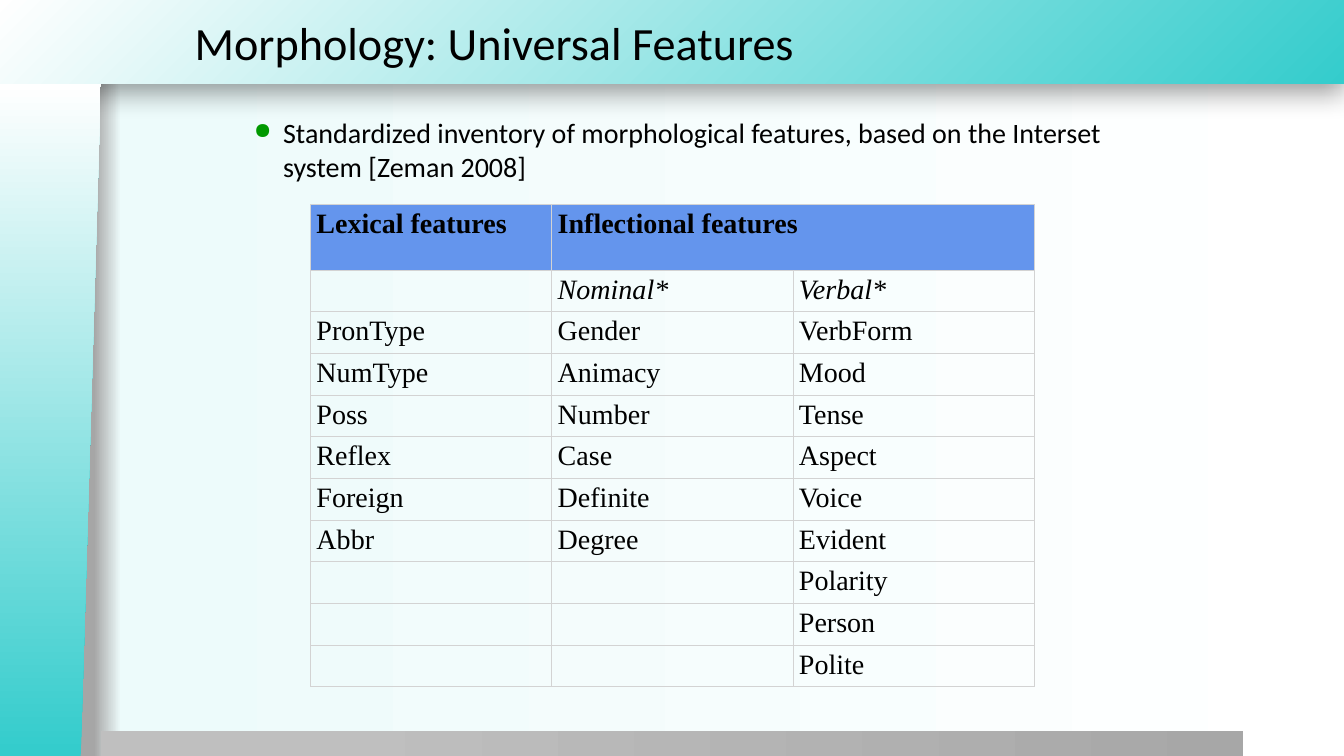
"""Builds a slide listing the universal morphological features."""
import pptx
import pptx.dml.color
import pptx.enum.shapes
import pptx.enum.text
import pptx.oxml
import pptx.oxml.ns
import pptx.util

RGB = pptx.dml.color.RGBColor
SHAPE = pptx.enum.shapes.MSO_SHAPE
ANCHOR = pptx.enum.text.MSO_ANCHOR
Pt = pptx.util.Pt
qn = pptx.oxml.ns.qn

BLACK = RGB(0x00, 0x00, 0x00)
WHITE = RGB(0xFF, 0xFF, 0xFF)
TEAL = RGB(0x34, 0xCC, 0xCC)
MIST = RGB(0xED, 0xFB, 0xFB)
EDGE_GRAY = RGB(0xA6, 0xA6, 0xA6)
FOOT_LIGHT = RGB(0xBF, 0xBF, 0xBF)
FOOT_DARK = RGB(0xA7, 0xA7, 0xA7)
GREEN = RGB(0x00, 0x99, 0x00)
HEADER_BLUE = RGB(0x64, 0x95, 0xED)
BORDER_GRAY = RGB(0xD3, 0xD3, 0xD3)

WIDTH, HEIGHT = pptx.util.Inches(13.33), pptx.util.Inches(7.5)
COLUMN, ROW = WIDTH / 100, HEIGHT / 75

SANS, SERIF = "Calibri", "Times New Roman"
LINEAR = '<a:lin ang="0" scaled="0"/>'
FROM_CORNER = '<a:path path="circle"><a:fillToRect l="100000" t="100000"/></a:path>'

FEATURES = [
    ("Lexical features", "Inflectional features", ""),
    ("", "Nominal*", "Verbal*"),
    ("PronType", "Gender", "VerbForm"),
    ("NumType", "Animacy", "Mood"),
    ("Poss", "Number", "Tense"),
    ("Reflex", "Case", "Aspect"),
    ("Foreign", "Definite", "Voice"),
    ("Abbr", "Degree", "Evident"),
    ("", "", "Polarity"),
    ("", "", "Person"),
    ("", "", "Polite"),
]


def grid_box(left, top, width, height):
    """Turn columns and rows of the slide grid into lengths."""
    return int(left * COLUMN), int(top * ROW), int(width * COLUMN), int(height * ROW)


def xml(text):
    """Parse one drawing element."""
    head, sep, tail = text.partition(">")
    slash = "/" if head.endswith("/") else ""
    return pptx.oxml.parse_xml(f"{head.rstrip('/')} {pptx.oxml.ns.nsdecls('a')}{slash}{sep}{tail}")


def set_gradient(fill, element, stops, direction=LINEAR):
    """Give a fill the colour stops and the direction of a gradient."""
    fill.gradient()
    grad = next(element.iter(qn("a:gradFill")))
    marks = "".join(
        f'<a:gs pos="{share * 1000}"><a:srgbClr val="{color}"/></a:gs>' for share, color in stops
    )
    grad.getparent().replace(
        grad, xml(f'<a:gradFill rotWithShape="1"><a:gsLst>{marks}</a:gsLst>{direction}</a:gradFill>')
    )


def add_panel(s, kind, box, stops, direction=LINEAR):
    """Add a frame panel with a gradient and no outline."""
    sp = s.shapes.add_shape(kind, *grid_box(*box))
    sp.shadow.inherit = False
    sp.line.fill.background()
    set_gradient(sp.fill, sp.element, stops, direction)
    return sp


def add_frame(s):
    """Add the background, the foot bar, the side panel and the top band."""
    set_gradient(s.background.fill, s.element, [(7, EDGE_GRAY), (9, MIST), (100, WHITE)])
    band = add_panel(s, SHAPE.RECTANGLE, (0, 0, 100, 8.3), [(0, TEAL), (100, WHITE)], FROM_CORNER)
    effects = band.element.spPr.find(qn("a:effectLst"))
    effects.append(xml(
        f'<a:outerShdw blurRad="{Pt(20)}" dist="{Pt(6)}" dir="5400000" rotWithShape="0">'
        f'<a:srgbClr val="{BLACK}"><a:alpha val="40000"/></a:srgbClr></a:outerShdw>'
    ))
    add_panel(s, SHAPE.RECTANGLE, (7.5, 72.5, 85, 2.5), [(20, FOOT_LIGHT), (100, FOOT_DARK)])
    side = add_panel(
        s, SHAPE.FLOWCHART_MANUAL_INPUT, (-21.3, 36.7, 50.1, 10), [(1, TEAL), (100, WHITE)]
    )
    side.rotation = 270
    side.element.spPr.find(qn("a:xfrm")).set("flipV", "1")


def add_run(p, text, size, font):
    """Add a black run to a paragraph."""
    r = p.add_run()
    r.text = text
    r.font.size = Pt(size)
    r.font.name = font
    r.font.color.rgb = BLACK
    return r


def set_title(s, text):
    """Place the title over the top band."""
    title = s.shapes.title
    title.left, title.top, title.width, title.height = grid_box(13.73, 0, 86.27, 8.3)
    title.element.getparent().append(title.element)
    tf = title.text_frame
    tf.auto_size = pptx.enum.text.MSO_AUTO_SIZE.NONE
    tf.vertical_anchor = ANCHOR.MIDDLE
    p = tf.paragraphs[0]
    p.alignment = pptx.enum.text.PP_ALIGN.LEFT
    add_run(p, text, 33, SANS)


def add_bullet(s, text):
    """Add the bulleted statement above the table."""
    tf = s.shapes.add_textbox(*grid_box(18.15, 11, 70.3, 8.3)).text_frame
    tf.word_wrap = True
    p = tf.paragraphs[0]
    p.space_before = Pt(4)
    add_run(p, text, 20, SANS)
    pPr = p._p.get_or_add_pPr()
    indent = pptx.util.Inches(0.29)
    pPr.set("marL", str(indent))
    pPr.set("indent", str(-indent))
    pPr.append(xml(f'<a:buClr><a:srgbClr val="{GREEN}"/></a:buClr>'))
    pPr.append(xml('<a:buSzPct val="80000"/>'))
    pPr.append(xml('<a:buChar char="●"/>'))


def format_cell(cell, header):
    """Set the borders, margins and fill of a cell."""
    tcPr = cell._tc.get_or_add_tcPr()
    for side in "LRTB":
        tcPr.append(xml(
            f'<a:ln{side} w="{Pt(0.6)}"><a:solidFill><a:srgbClr val="{BORDER_GRAY}"/>'
            f'</a:solidFill></a:ln{side}>'
        ))
    cell.margin_left = cell.margin_right = pptx.util.Inches(0.06)
    cell.margin_top = cell.margin_bottom = pptx.util.Inches(0.04)
    if header:
        cell.fill.solid()
        cell.fill.fore_color.rgb = HEADER_BLUE
    else:
        cell.fill.background()


def add_feature_table(s, features):
    """Add the table of lexical and inflectional features."""
    box = grid_box(23.1, 20.3, 53.85, 47.5)
    table = s.shapes.add_table(len(features), 3, *box).table
    for i, texts in enumerate(features):
        table.rows[i].height = int((4.1 if i else 6.5) * ROW)
        for j, text in enumerate(texts):
            cell = table.cell(i, j)
            format_cell(cell, header=i == 0)
            if text:
                r = add_run(cell.text_frame.paragraphs[0], text, 20, SERIF)
                r.font.bold = i == 0
                r.font.italic = i == 1
    table.cell(0, 1).merge(table.cell(0, 2))


def main():
    """Build and save the slide."""
    prs = pptx.Presentation()
    prs.slide_width, prs.slide_height = WIDTH, HEIGHT
    s = prs.slides.add_slide(prs.slide_layouts[5])
    add_frame(s)
    set_title(s, "Morphology: Universal Features")
    add_bullet(
        s,
        "Standardized inventory of morphological features, "
        "based on the Interset system [Zeman 2008]",
    )
    add_feature_table(s, FEATURES)
    prs.save("out.pptx")


if __name__ == "__main__":
    main()
